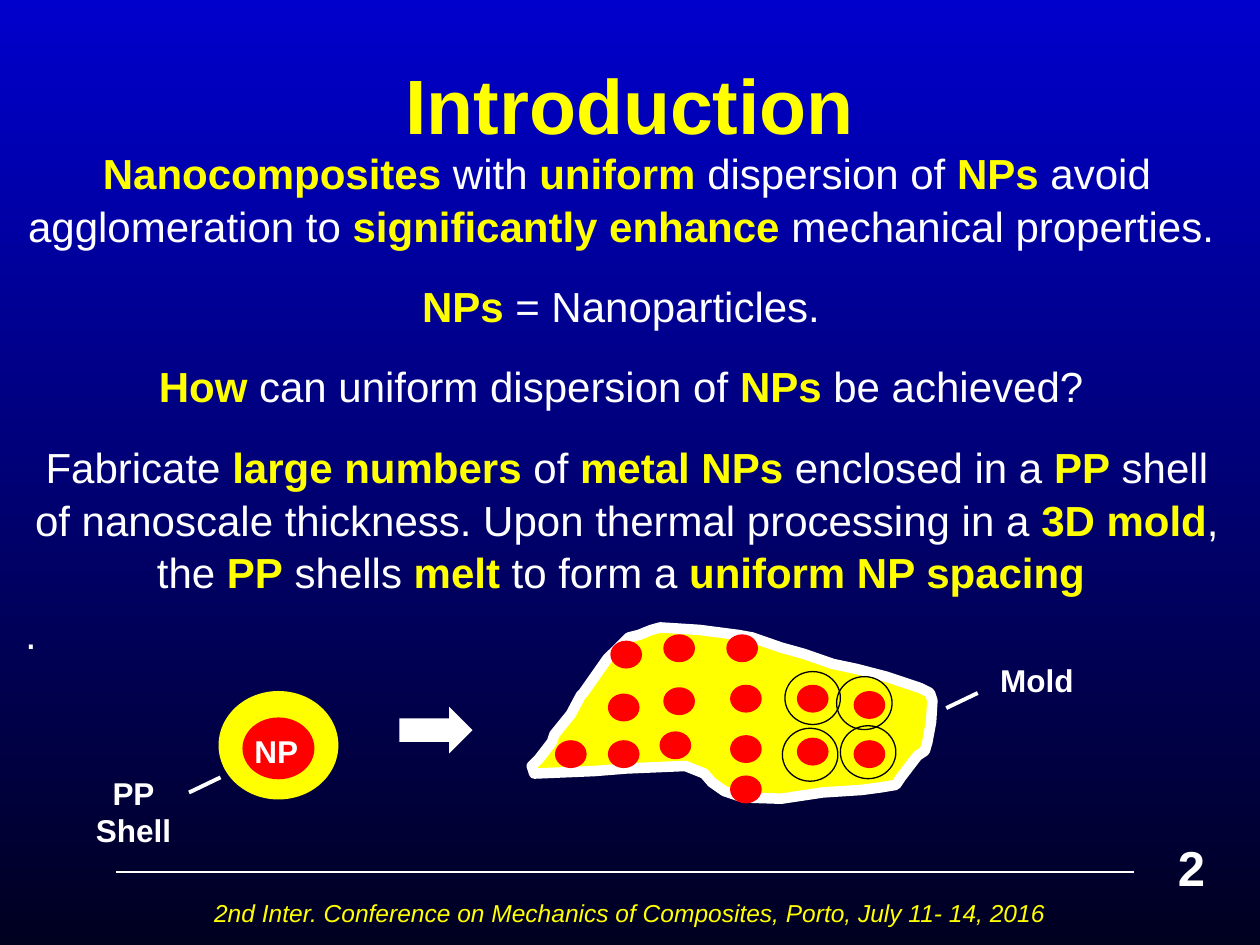
"""Build the Introduction slide on uniform nanoparticle dispersion."""
from typing import NamedTuple, Optional

from lxml.etree import SubElement
from pptx import Presentation
from pptx.dml.color import RGBColor
from pptx.enum.shapes import MSO_CONNECTOR as Link, MSO_SHAPE as Kind
from pptx.enum.text import MSO_ANCHOR as Anchor, PP_ALIGN as Align
from pptx.oxml.ns import qn
from pptx.util import Inches, Pt

WHITE = RGBColor(0xFF, 0xFF, 0xFF)
YELLOW = RGBColor(0xFF, 0xFF, 0x00)
RED = RGBColor(0xFF, 0x00, 0x00)
BLACK = RGBColor(0x00, 0x00, 0x00)
BLUE = RGBColor(0x00, 0x00, 0xCC)
NAVY = RGBColor(0x00, 0x00, 0x20)


class Box(NamedTuple):
    x: float
    y: float
    w: float
    h: float

    def span(self) -> list:
        return [Inches(v) for v in self]


class Para(NamedTuple):
    text: str
    gap: float = 0
    align: Align = Align.CENTER


class Line(NamedTuple):
    x1: float
    y1: float
    x2: float
    y2: float
    width: float = 2.25


class Oval(NamedTuple):
    box: Box
    fill: Optional[RGBColor]
    line: RGBColor
    width: float = 2.25


BODY = [
    Para("*Nanocomposites* with *uniform* dispersion of *NPs* avoid agglomeration to "
         "*significantly enhance* mechanical properties. "),
    Para("*NPs* = Nanoparticles. ", 15.7),
    Para("*How* can uniform dispersion of *NPs* be achieved? ", 15.7),
    Para("Fabricate *large numbers* of *metal NPs* enclosed in a *PP* shell of nanoscale "
         "thickness. Upon thermal processing in a *3D mold*, the *PP* shells *melt* to form "
         "a *uniform NP spacing* ", 15.7),
    Para(".", 4.5, Align.LEFT),
]
FOOT = "2nd Inter. Conference on Mechanics of Composites, Porto, July 11- 14, 2016"
LINES = [
    Line(0.92, 6.92, 9, 6.92, 0.75),
    Line(1.5, 6.29, 1.75, 6.17),
    Line(7.51, 5.62, 7.76, 5.5),
]
CORE = [
    Oval(Box(1.75, 5.5, 0.92, 0.83), YELLOW, YELLOW),
    Oval(Box(1.94, 5.71, 0.54, 0.46), RED, RED),
]
DOTS = [
    (4.86, 5.1), (5.28, 5.05), (5.78, 5.05),
    (4.84, 5.52), (5.28, 5.47), (5.81, 5.45), (6.34, 5.45), (6.79, 5.5),
    (4.42, 5.89), (4.84, 5.89), (5.25, 5.82), (5.81, 5.85), (6.34, 5.87), (6.79, 5.89),
    (5.81, 6.17),
]
RINGS = [(6.23, 5.33), (6.64, 5.37), (6.21, 5.78), (6.67, 5.76)]
MOLD = [
    (4.63, 5.5), (4.82, 5.23), (4.88, 5.17), (4.99, 5.06), (5.07, 5.04), (5.17, 5),
    (5.24, 4.98), (5.55, 5), (5.86, 5.04), (5.97, 5.06), (6.2, 5.14), (6.38, 5.19),
    (6.61, 5.27), (6.8, 5.31), (7.03, 5.37), (7.3, 5.46), (7.38, 5.5), (7.4, 5.56),
    (7.39, 5.73), (7.36, 5.89), (7.34, 5.96), (7.28, 6), (7.15, 6.17), (7.11, 6.23),
    (6.99, 6.25), (6.84, 6.27), (6.53, 6.29), (6.2, 6.34), (5.9, 6.33), (5.75, 6.28),
    (5.65, 6.21), (5.59, 6.14), (5.44, 6.08), (4.97, 6.1), (4.72, 6.12), (4.24, 6.14),
    (4.22, 6.08), (4.28, 6.02), (4.38, 5.89), (4.4, 5.83), (4.53, 5.67), (4.61, 5.52),
]


def say(slide, box: Box, paras: list, *, size: float, color: RGBColor = WHITE,
        bold: bool = False, italic: bool = False, pitch: float = 1,
        anchor: Anchor = Anchor.TOP) -> None:
    frame = slide.shapes.add_textbox(*box.span()).text_frame
    frame.word_wrap = True
    frame.vertical_anchor = anchor
    for i, item in enumerate(paras):
        para = frame.paragraphs[0] if i == 0 else frame.add_paragraph()
        para.alignment = item.align
        para.space_before = Pt(item.gap)
        para.line_spacing = pitch
        for j, part in enumerate(item.text.split("*")):
            if not part:
                continue
            key = j % 2 == 1
            run = para.add_run()
            run.text = part
            font = run.font
            font.name, font.size = "Arial", Pt(size)
            font.bold, font.italic = bold or key, italic
            font.color.rgb = YELLOW if key else color


def paint(shape, fill: Optional[RGBColor], line: Optional[RGBColor],
          width: float = 0) -> None:
    shape.shadow.inherit = False
    if fill is None:
        shape.fill.background()
    else:
        shape.fill.solid()
        shape.fill.fore_color.rgb = fill
    if line is None:
        shape.line.fill.background()
    else:
        shape.line.color.rgb = line
        shape.line.width = Pt(width)


def draw_oval(slide, oval: Oval) -> None:
    shape = slide.shapes.add_shape(Kind.OVAL, *oval.box.span())
    paint(shape, oval.fill, oval.line, oval.width)


def draw_line(slide, line: Line) -> None:
    ends = [Inches(v) for v in line[:4]]
    rule = slide.shapes.add_connector(Link.STRAIGHT, *ends)
    rule.line.color.rgb = WHITE
    rule.line.width = Pt(line.width)
    SubElement(rule._element.spPr, qn("a:effectLst"))


def draw_mold(slide) -> None:
    pts = [(Inches(x), Inches(y)) for x, y in MOLD]
    path = slide.shapes.build_freeform(*pts[0])
    path.add_line_segments(pts[1:], close=True)
    shape = path.convert_to_shape()
    paint(shape, YELLOW, WHITE, 6)
    SubElement(shape.line._get_or_add_ln(), qn("a:round"))


def main() -> None:
    deck = Presentation()
    deck.slide_width, deck.slide_height = Inches(10), Inches(7.5)
    slide = deck.slides.add_slide(deck.slide_layouts[6])
    back = slide.background.fill
    back.gradient()
    back.gradient_angle = 270
    for stop, color in zip(back.gradient_stops, (BLUE, NAVY)):
        stop.color.rgb = color

    say(slide, Box(0.75, 0.2, 8.5, 1.25), [Para("Introduction")], size=44,
        color=YELLOW, bold=True, anchor=Anchor.MIDDLE)
    say(slide, Box(0.1, 1.1, 9.75, 4.17), BODY, size=24, pitch=1.05)
    say(slide, Box(0.75, 7.08, 8.5, 0.42), [Para(FOOT)], size=14,
        color=YELLOW, italic=True)
    say(slide, Box(9.25, 6.6, 0.75, 0.57), [Para("2", align=Align.LEFT)],
        size=28, bold=True)

    for line in LINES:
        draw_line(slide, line)
    for oval in CORE:
        draw_oval(slide, oval)
    arrow = slide.shapes.add_shape(Kind.RIGHT_ARROW, *Box(3.17, 5.61, 0.58, 0.37).span())
    paint(arrow, WHITE, None)
    draw_mold(slide)
    for x, y in DOTS:
        draw_oval(slide, Oval(Box(x, y, 0.22, 0.19), RED, RED))
    for x, y in RINGS:
        draw_oval(slide, Oval(Box(x, y, 0.44, 0.42), None, BLACK, 0.75))

    say(slide, Box(1.92, 5.76, 0.75, 0.4), [Para("NP", align=Align.LEFT)],
        size=18, bold=True)
    say(slide, Box(0.56, 6.09, 1, 0.71), [Para("PP"), Para("Shell")], size=18, bold=True)
    say(slide, Box(7.84, 5.2, 1, 0.4), [Para("Mold", align=Align.LEFT)],
        size=18, bold=True)
    deck.save("out.pptx")


if __name__ == "__main__":
    main()
